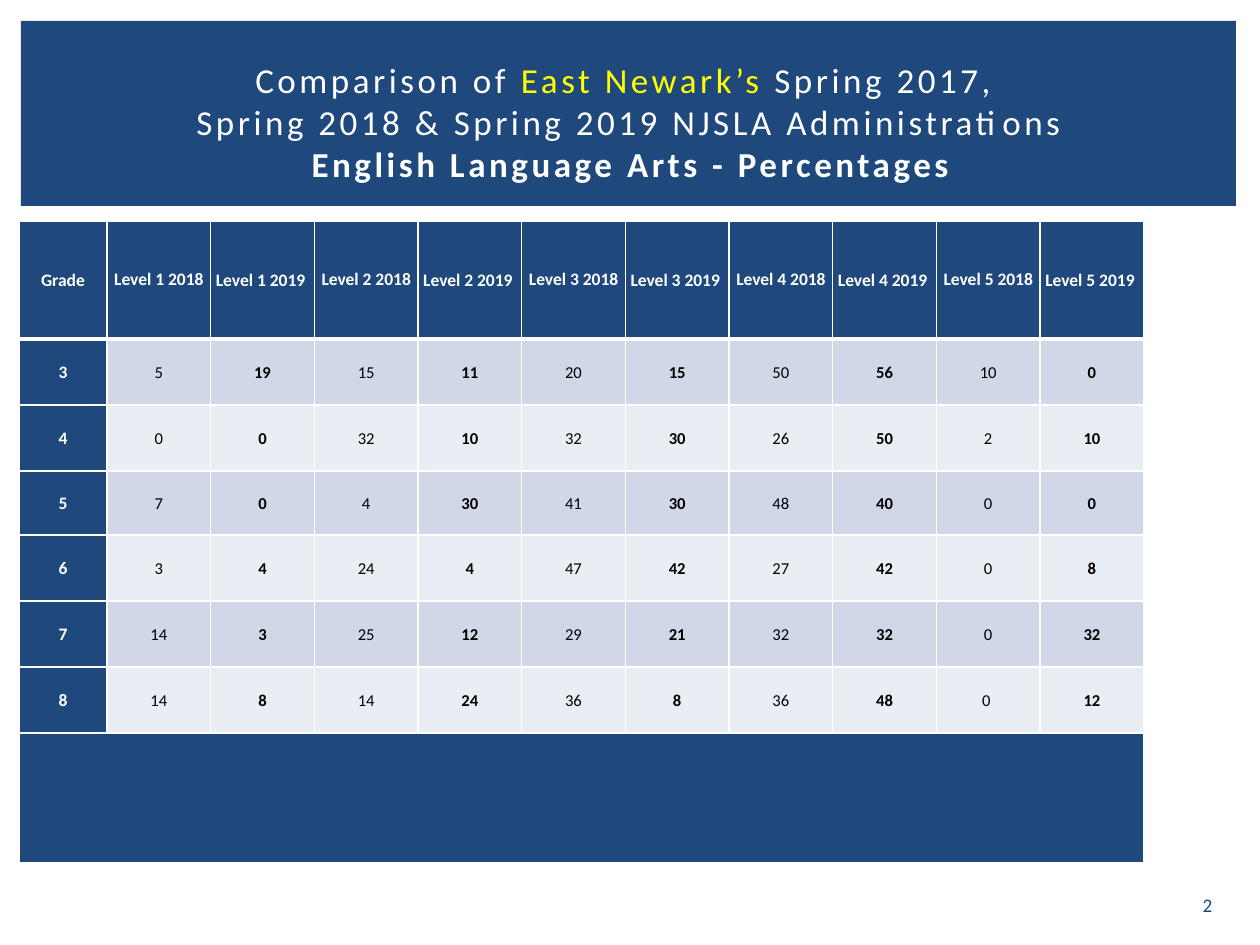
import pptx
import pptx.util
import pptx.dml.color
import pptx.enum.shapes
import pptx.enum.text
import pptx.oxml


class Theme:
    font = "Calibri"
    navy, white, black = "1F497D", "FFFFFF", "000000"
    yellow = "FFFF00"
    bands = ("D0D8E8", "E9EDF4")
    title, head, body, page = 20, 10, 9.5, 11


def px(n):
    return pptx.util.Emu(round(n * 914400 / 126))


def style(run, size, color, bold=False):
    font = run.font
    font.name, font.size, font.bold = Theme.font, pptx.util.Pt(size), bold
    font.color.rgb = pptx.dml.color.RGBColor.from_string(color)


CENTER = pptx.enum.text.PP_ALIGN.CENTER
MIDDLE = pptx.enum.text.MSO_ANCHOR.MIDDLE

deck = pptx.Presentation()
deck.slide_width, deck.slide_height = px(1260), px(945)
slide = deck.slides.add_slide(deck.slide_layouts[6])
shapes = slide.shapes

# Title band
band = shapes.add_shape(pptx.enum.shapes.MSO_SHAPE.RECTANGLE,
                        px(21), px(21), px(1215), px(185))
band.shadow.inherit = False
band.fill.solid()
band.fill.fore_color.rgb = pptx.dml.color.RGBColor.from_string(Theme.navy)
band.line.fill.background()

# Title: one list of runs per line
lines = [
    [("Comparison of ", Theme.white, False),
     ("East Newark’s ", Theme.yellow, False),
     ("Spring 2017, ", Theme.white, False)],
    [("Spring 2018 & Spring 2019 NJSLA Administrations", Theme.white, False)],
    [("English Language Arts - Percentages", Theme.white, True)],
]
title = shapes.add_textbox(px(53), px(49), px(1155), px(145))
frame = title.text_frame
frame.word_wrap = True
frame.vertical_anchor = MIDDLE
para = frame.paragraphs[0]
para.alignment = CENTER
for i, line in enumerate(lines):
    if i:
        para.add_line_break()
    for text, color, bold in line:
        run = para.add_run()
        run.text = text
        style(run, Theme.title, color, bold)
        run._r.get_or_add_rPr().set("spc", "200")

# Table contents
header = ["Grade"]
for level in range(1, 6):
    header += [f"Level {level} 2018", f"Level {level} 2019 "]
rows = [
    header,
    [3, 5, 19, 15, 11, 20, 15, 50, 56, 10, 0],
    [4, 0, 0, 32, 10, 32, 30, 26, 50, 2, 10],
    [5, 7, 0, 4, 30, 41, 30, 48, 40, 0, 0],
    [6, 3, 4, 24, 4, 47, 42, 27, 42, 0, 8],
    [7, 14, 3, 25, 12, 29, 21, 32, 32, 0, 32],
    [8, 14, 8, 14, 24, 36, 8, 36, 48, "0 ", 12],
    [""] * 11,
]
highs = [118, 66, 66, 64, 66, 66, 66, 130]
last = len(rows) - 1

# Table grid
grid = shapes.add_table(len(rows), len(header),
                        px(19), px(221), px(1125), px(sum(highs))).table
grid.first_row = grid.horz_banding = False
for c, col in enumerate(grid.columns):
    col.width = px(1037 / 10) if c else px(88)
for r, high in enumerate(highs):
    grid.rows[r].height = px(high)
grid.cell(last, 0).merge(grid.cell(last, len(header) - 1))

# Table cells
for r, row in enumerate(rows):
    for c, value in enumerate(row):
        cell = grid.cell(r, c)
        dark = r in (0, last) or c == 0
        latest = c > 0 and c % 2 == 0

        for side in "LRTB":
            if r == 1 and side == "T":
                continue  # the heavy header rule lies here
            width = pptx.util.Pt(3 if r == 0 and side == "B" else 1)
            cell._tc.get_or_add_tcPr().append(pptx.oxml.parse_xml(
                f'<a:ln{side} xmlns:a="http://schemas.openxmlformats.org/'
                f'drawingml/2006/main" w="{width}"><a:solidFill>'
                f'<a:srgbClr val="{Theme.white}"/></a:solidFill></a:ln{side}>'))
        cell.fill.solid()
        cell.fill.fore_color.rgb = pptx.dml.color.RGBColor.from_string(
            Theme.navy if dark else Theme.bands[(r - 1) % 2])

        if r == last:
            continue
        cell.vertical_anchor = MIDDLE
        cell.margin_left = cell.margin_right = px(1 if latest else 6)
        cell.margin_top = px(1 if latest else 4)
        cell.margin_bottom = px(0 if latest else 4)
        para = cell.text_frame.paragraphs[0]
        para.text = str(value)
        para.alignment = CENTER
        if r or c == 0:
            para.line_spacing = 1.06
            para.space_after = pptx.util.Pt(8)
        style(para.runs[0], Theme.head if dark else Theme.body,
              Theme.white if dark else Theme.black, dark or latest)

# Page number
page = shapes.add_textbox(px(1178), px(886), px(59), px(38))
page.text_frame.word_wrap = True
page.text_frame.vertical_anchor = MIDDLE
para = page.text_frame.paragraphs[0]
para.text = "2"
para.alignment = CENTER
style(para.runs[0], Theme.page, Theme.navy)

deck.save("out.pptx")
